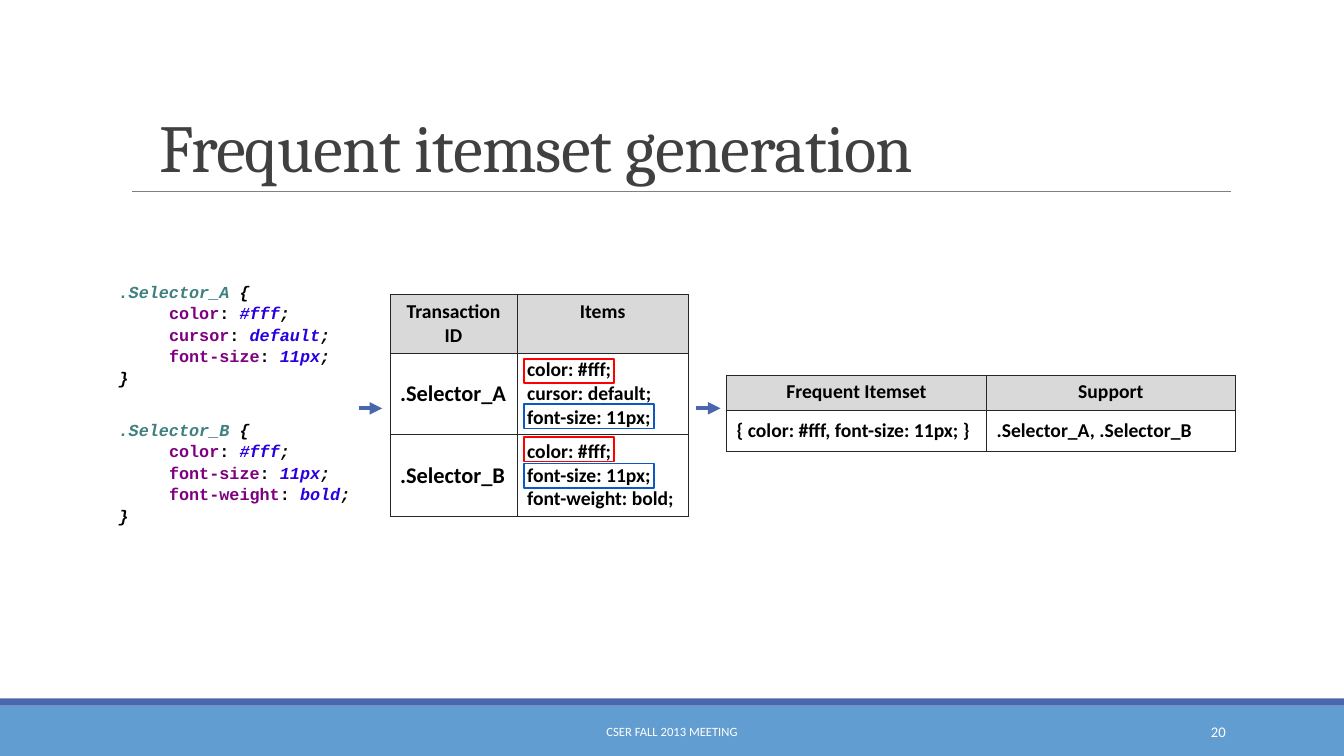
"""Build the slide on generating frequent itemsets from CSS selectors."""
from lxml.etree import SubElement
from pptx import Presentation
from pptx.dml.color import RGBColor
from pptx.enum.shapes import MSO_CONNECTOR as Connector, MSO_SHAPE as Preset
from pptx.enum.text import MSO_ANCHOR as Anchor, PP_ALIGN as Align
from pptx.oxml import parse_xml
from pptx.oxml.ns import nsdecls, qn
from pptx.util import Cm, Pt


def color(value):
    return RGBColor.from_string(value)


def write(paragraph, text, fill, **formats):
    run = paragraph.add_run()
    run.text = text
    run.font.color.rgb = color(fill)
    for name, value in formats.items():
        setattr(run.font, name, value)
    return run


presentation = Presentation()
presentation.slide_width, presentation.slide_height = Cm(33.87), Cm(19.05)
slide = presentation.slides.add_slide(presentation.slide_layouts[6])

for top, height, fill in [(17.78, 1.27, "629DD1"), (17.6, 0.18, "4A66AC")]:
    band = slide.shapes.add_shape(Preset.RECTANGLE, 0, Cm(top), presentation.slide_width, Cm(height))
    band.shadow.inherit = False
    band.fill.solid()
    band.fill.fore_color.rgb = color(fill)
    band.line.fill.background()

lines = [
    (3.33, 31.01, 4.83, "808080", 0.5, False),
    (9.04, 9.63, 10.29, "4A66AC", 3, True),
    (17.55, 18.16, 10.29, "4A66AC", 3, True),
]
for start, end, y, fill, width, has_arrow in lines:
    connector = slide.shapes.add_connector(Connector.STRAIGHT, Cm(start), Cm(y), Cm(end), Cm(y))
    connector.line.color.rgb = color(fill)
    connector.line.width = Pt(width)
    properties = connector._element.spPr
    if has_arrow:
        SubElement(properties.find(qn("a:ln")), qn("a:tailEnd"), type="triangle")
    SubElement(properties, qn("a:effectLst"))

labels = [
    ("Frequent itemset generation", 3.76, 0.79, 27.94, 4.04, Anchor.BOTTOM, Align.LEFT,
     "404040", {"size": Pt(48), "name": "Cambria"}),
    ("CSER FALL 2013 MEETING", 10.24, 17.93, 13.39, 1.02, Anchor.MIDDLE, Align.CENTER,
     "FFFFFF", {"size": Pt(9), "name": "Calibri"}),
    ("20", 27.51, 17.93, 3.63, 1.02, Anchor.MIDDLE, Align.RIGHT,
     "FFFFFF", {"size": Pt(10.5), "name": "Calibri"}),
]
for text, left, top, width, height, anchor, align, fill, formats in labels:
    frame = slide.shapes.add_textbox(Cm(left), Cm(top), Cm(width), Cm(height)).text_frame
    frame.word_wrap = True
    frame.vertical_anchor = anchor
    paragraph = frame.paragraphs[0]
    paragraph.alignment = align
    run = write(paragraph, text, fill, **formats)
    if anchor == Anchor.BOTTOM:
        paragraph.line_spacing = 0.85
        run._r.get_or_add_rPr().set("spc", "-50")

tables = [
    (9.83, 7.42, [3.2, 4.32], [1.47, 2.06, 2.06], [
        ["Transaction ID", "Items"],
        [".Selector_A", "color: #fff;\ncursor: default;\nfont-size: 11px;"],
        [".Selector_B", "color: #fff;\nfont-size: 11px;\nfont-weight: bold;"],
    ]),
    (18.31, 9.45, [6.55, 6.27], [0.89, 1.04], [
        ["Frequent Itemset", "Support"],
        ["{ color: #fff, font-size: 11px; }", ".Selector_A, .Selector_B"],
    ]),
]
for left, top, widths, heights, rows in tables:
    table = slide.shapes.add_table(len(rows), len(widths), Cm(left), Cm(top),
                                   Cm(sum(widths)), Cm(sum(heights))).table
    table.first_row = table.horz_banding = False
    for column, width in zip(table.columns, widths):
        column.width = Cm(width)
    for row_index, (row, texts) in enumerate(zip(table.rows, rows)):
        row.height = Cm(heights[row_index])
        is_header = row_index == 0
        for cell, text in zip(row.cells, texts):
            is_selector = text in (".Selector_A", ".Selector_B")
            cell.vertical_anchor = Anchor.TOP if is_header or "\n" in text else Anchor.MIDDLE
            for line_index, line in enumerate(text.split("\n")):
                frame = cell.text_frame
                paragraph = frame.add_paragraph() if line_index else frame.paragraphs[0]
                paragraph.alignment = Align.CENTER if is_header else Align.LEFT
                write(paragraph, line, "000000", size=Pt(16 if is_selector else 14),
                      name="Calibri", bold=True)
            cell_properties = cell._tc.get_or_add_tcPr()
            for side in ("lnL", "lnR", "lnT", "lnB"):
                cell_properties.append(parse_xml(
                    f'<a:{side} {nsdecls("a")} w="{Pt(0.25)}"><a:solidFill>'
                    f'<a:srgbClr val="262626"/></a:solidFill></a:{side}>'))
            if is_header:
                cell.fill.solid()
                cell.fill.fore_color.rgb = color("D9D9D9")
            else:
                cell.fill.background()

highlights = slide.shapes.add_group_shape()
for fill, width, tops in [("0E58C4", 3.28, (10.19, 11.68)), ("FF0000", 2.26, (9.04, 11.02))]:
    for top in tops:
        box = highlights.shapes.add_shape(Preset.RECTANGLE, Cm(13.21), Cm(top), Cm(width), Cm(0.61))
        box.shadow.inherit = False
        box.fill.background()
        box.line.color.rgb = color(fill)
        box.line.width = Pt(1.25)

code = {"size": Pt(12), "name": "Courier New", "bold": True}
rules = [
    (6.93, ".Selector_A ", [("color", "#fff"), ("cursor", "default"), ("font-size", "11px")]),
    (10.41, ".Selector_B ", [("color", "#fff"), ("font-size", "11px"), ("font-weight", "bold")]),
]
for top, selector, declarations in rules:
    frame = slide.shapes.add_textbox(Cm(2.74), Cm(top), Cm(7.44), Cm(2.82)).text_frame
    frame.word_wrap = True
    paragraph = frame.paragraphs[0]
    write(paragraph, selector, "3F7F7F", italic=True, **code)
    write(paragraph, "{", "000000", italic=True, **code)
    for name, value in declarations:
        paragraph = frame.add_paragraph()
        paragraph._p.get_or_add_pPr().set("marL", str(Cm(1.27)))
        write(paragraph, name, "7F007F", italic=False, **code)
        write(paragraph, ": ", "000000", italic=False, **code)
        write(paragraph, value, "2A00E1", italic=True, **code)
        write(paragraph, ";", "000000", italic=True, **code)
    write(frame.add_paragraph(), "}", "000000", italic=True, **code)
    for paragraph in frame.paragraphs:
        paragraph.line_spacing = 1.07

presentation.save("out.pptx")
